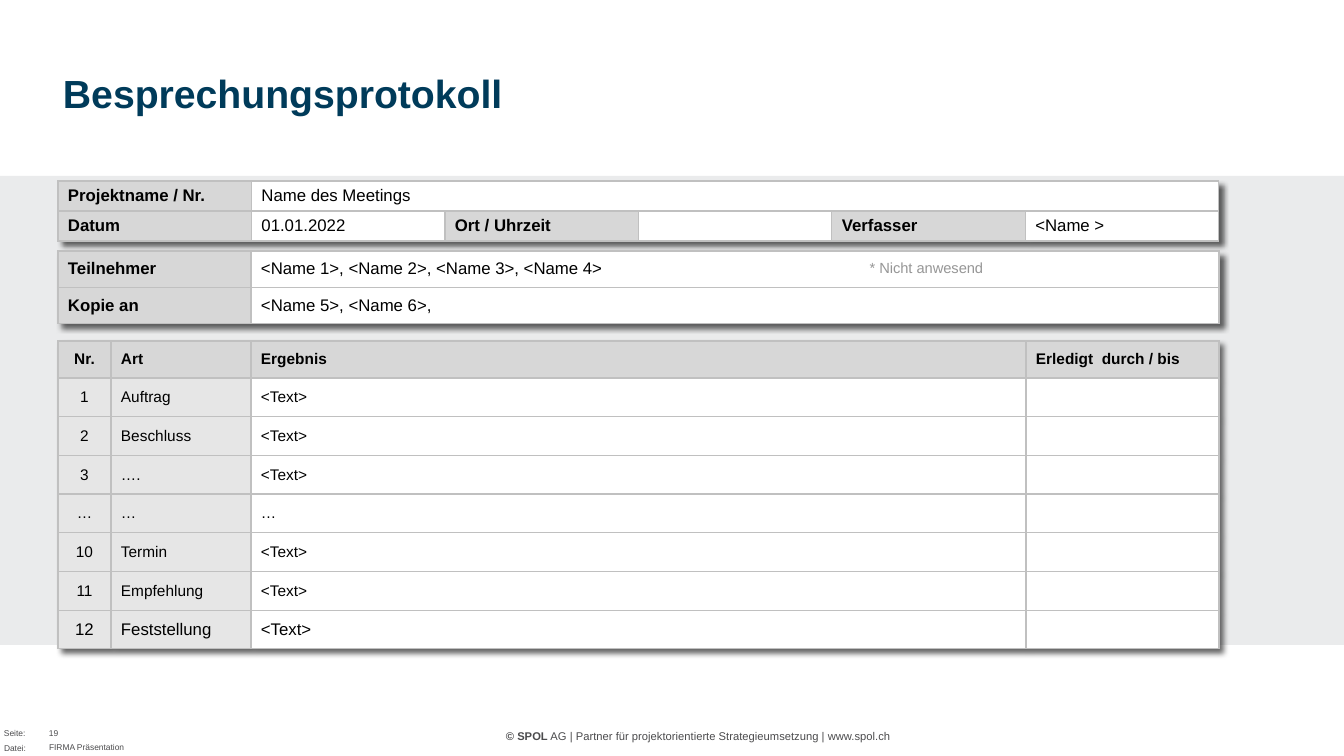
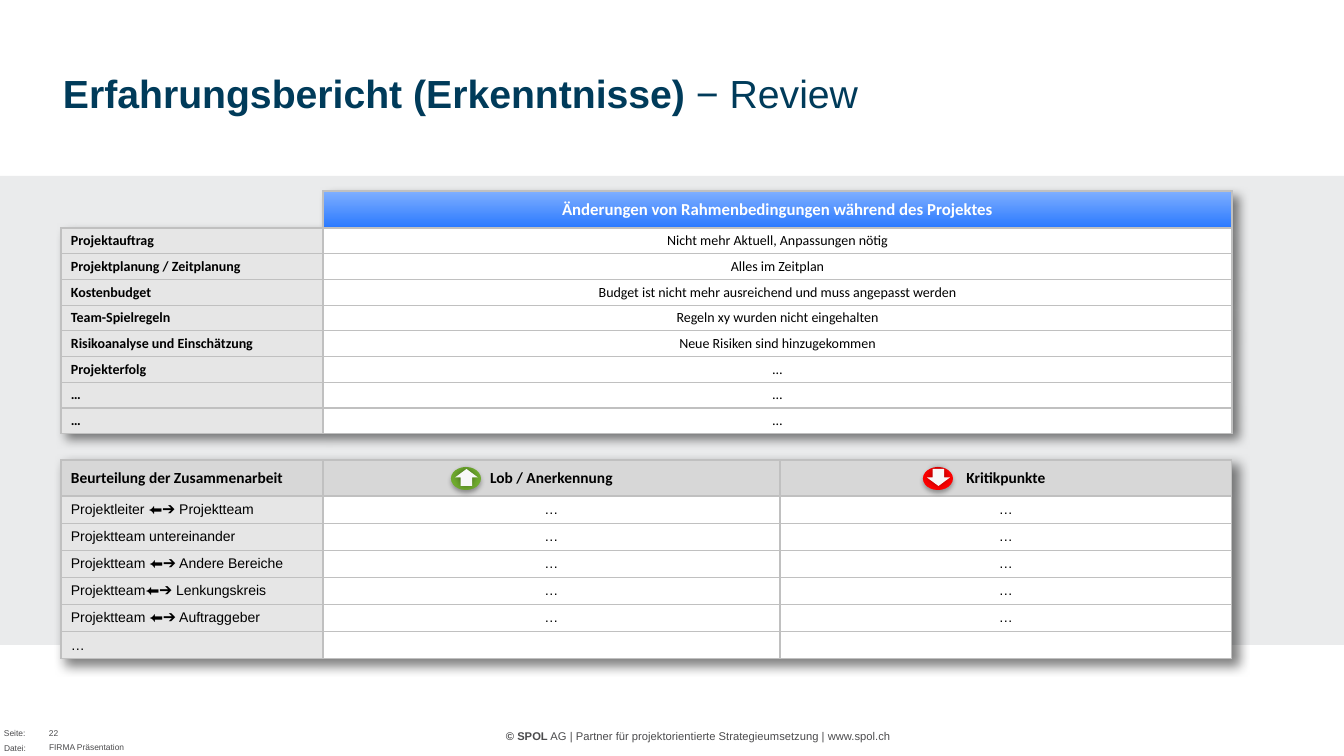
from dataclasses import dataclass, replace
from typing import NamedTuple, Optional

import lxml.etree
import pptx
import pptx.dml.color
import pptx.enum.shapes
import pptx.enum.text
import pptx.oxml.ns
import pptx.util

RGBColor = pptx.dml.color.RGBColor
Align = pptx.enum.text.PP_ALIGN
Anchor = pptx.enum.text.MSO_ANCHOR
Preset = pptx.enum.shapes.MSO_SHAPE
qn = pptx.oxml.ns.qn

# Colours
BLACK = RGBColor(0x00, 0x00, 0x00)
WHITE = RGBColor(0xFF, 0xFF, 0xFF)
NAVY = RGBColor(0x00, 0x3B, 0x5A)
FOOTER_GREY = RGBColor(0x4B, 0x4B, 0x4D)
NOTE_GREY = RGBColor(0x96, 0x96, 0x96)
BAND_GREY = RGBColor(0xEA, 0xEB, 0xEC)
HEADER_GREY = RGBColor(0xD7, 0xD7, 0xD7)
LABEL_GREY = RGBColor(0xE6, 0xE6, 0xE6)
BORDER_GREY = RGBColor(0xC0, 0xC0, 0xC0)
SKY_BLUE = RGBColor(0x7F, 0xAF, 0xFF)
BRIGHT_BLUE = RGBColor(0x2A, 0x79, 0xFF)
GREEN = RGBColor(0x70, 0xAC, 0x2E)
RED = RGBColor(0xFF, 0x00, 0x00)
ARROW_WHITE = RGBColor(0xF8, 0xF8, 0xF8)

EMU_PER_PX = 914400 / 100.8
NO_TABLE_STYLE = "{2D5ABB26-0587-4C30-8999-92F81FD0307C}"


def px(length: float) -> int:
    return round(length * EMU_PER_PX)


class Box(NamedTuple):
    left: int
    top: int
    width: int
    height: int

    def emu(self) -> list[int]:
        return [px(length) for length in self]


class Run(NamedTuple):
    text: str
    bold: bool = False


class Shadow(NamedTuple):
    opacity: int  # percent
    blur: float  # points
    distance: float  # points
    angle: int  # degrees


class CellStyle(NamedTuple):
    fill: Optional[RGBColor]
    size: float
    bold: bool = False
    align: Align = Align.LEFT
    margin: int = 4
    font: str = "Arial"
    color: RGBColor = BLACK
    fill_end: Optional[RGBColor] = None
    edges: str = "LRTB"


class Cell(NamedTuple):
    text: str
    style: CellStyle
    span: int = 1


@dataclass(frozen=True)
class Grid:
    left: int
    top: int
    columns: list[float]
    first_row: int
    height: int
    rows: list[list[Cell]]
    shadow: Shadow


@dataclass(frozen=True)
class TextStyle:
    size: float
    color: RGBColor = FOOTER_GREY
    align: Align = Align.LEFT
    anchor: Anchor = Anchor.TOP
    side: int = 0
    margin: int = 0


TITLE = TextStyle(28, NAVY, anchor=Anchor.MIDDLE, side=10)
SMALL = TextStyle(6)
SMALL_BOTTOM = replace(SMALL, anchor=Anchor.BOTTOM)
COPYRIGHT = TextStyle(8, align=Align.CENTER, anchor=Anchor.BOTTOM)
NOTE = TextStyle(10.5, NOTE_GREY, Align.CENTER, side=10, margin=5)

TIGHT_SHADOW = Shadow(60, 4, 4, 45)
WIDE_SHADOW = Shadow(50, 8, 5, 45)
DISC_SHADOW = Shadow(32, 3.5, 2.2, 90)
ARROW_SHADOW = Shadow(40, 5, 0, 0)


# Formatting helpers
def set_attributes(target, values: dict) -> None:
    for name, value in values.items():
        setattr(target, name, value)


def add_run(paragraph, text: str, size: float, color: RGBColor, bold: bool, font: str = "Arial") -> None:
    run = paragraph.add_run()
    run.text = text
    set_attributes(run.font, {"name": font, "size": pptx.util.Pt(size), "bold": bold})
    run.font.color.rgb = color


def make_shadow(shadow: Shadow) -> lxml.etree._Element:
    effects = lxml.etree.Element(qn("a:effectLst"))
    outer = lxml.etree.SubElement(
        effects, qn("a:outerShdw"), blurRad=str(pptx.util.Pt(shadow.blur)),
        dist=str(pptx.util.Pt(shadow.distance)), dir=str(shadow.angle * 60000),
        algn="ctr", rotWithShape="0")
    color = lxml.etree.SubElement(outer, qn("a:srgbClr"), val=str(BLACK))
    lxml.etree.SubElement(color, qn("a:alpha"), val=str(shadow.opacity * 1000))
    return effects


def add_text(slide, box: Box, runs: list[Run], style: TextStyle) -> None:
    frame = slide.shapes.add_textbox(*box.emu()).text_frame
    set_attributes(frame, {
        "word_wrap": True, "vertical_anchor": style.anchor,
        "margin_left": px(style.side), "margin_right": px(style.side),
        "margin_top": px(style.margin), "margin_bottom": px(style.margin)})
    paragraph = frame.paragraphs[0]
    paragraph.alignment = style.align
    for run in runs:
        add_run(paragraph, run.text, style.size, style.color, run.bold)


def add_shape(shapes, preset: Preset, box: Box, color: RGBColor, shadow: Optional[Shadow] = None):
    shape = shapes.add_shape(preset, *box.emu())
    shape.fill.solid()
    shape.fill.fore_color.rgb = color
    shape.line.fill.background()
    shape.shadow.inherit = False
    if shadow:
        properties = shape._element.spPr
        properties.replace(properties.find(qn("a:effectLst")), make_shadow(shadow))
    return shape


# Tables
def add_borders(cell, edges: str) -> None:
    properties = cell._tc.get_or_add_tcPr()
    for edge in edges:
        line = lxml.etree.SubElement(properties, qn(f"a:ln{edge}"), w=str(pptx.util.Pt(1)))
        fill = lxml.etree.SubElement(line, qn("a:solidFill"))
        lxml.etree.SubElement(fill, qn("a:srgbClr"), val=str(BORDER_GREY))


def fill_cell(cell, style: CellStyle) -> None:
    if style.fill is None:
        cell.fill.background()
    elif style.fill_end is None:
        cell.fill.solid()
        cell.fill.fore_color.rgb = style.fill
    else:
        cell.fill.gradient()
        cell.fill.gradient_angle = 270
        for stop, color in zip(cell.fill.gradient_stops, (style.fill, style.fill_end)):
            stop.color.rgb = color


def format_cell(cell, content: Cell) -> None:
    style = content.style
    add_borders(cell, style.edges)
    fill_cell(cell, style)
    set_attributes(cell, {
        "vertical_anchor": Anchor.MIDDLE, "margin_left": px(10), "margin_right": px(10),
        "margin_top": px(style.margin), "margin_bottom": px(style.margin)})
    paragraph = cell.text_frame.paragraphs[0]
    paragraph.alignment = style.align
    if content.text:
        add_run(paragraph, content.text, style.size, style.color, style.bold, style.font)
    else:
        lxml.etree.SubElement(paragraph._p, qn("a:endParaRPr"), sz=str(round(style.size * 100)))


def add_grid(slide, grid: Grid) -> None:
    box = Box(grid.left, grid.top, sum(grid.columns), grid.height)
    table = slide.shapes.add_table(len(grid.rows), len(grid.columns), *box.emu()).table
    set_attributes(table, {"first_row": False, "horz_banding": False})
    properties = table._tbl.tblPr
    properties.find(qn("a:tableStyleId")).text = NO_TABLE_STYLE
    properties.insert(0, make_shadow(grid.shadow))
    for column, width in zip(table.columns, grid.columns):
        column.width = px(width)
    body_height = (grid.height - grid.first_row) / (len(grid.rows) - 1)
    for row_index, contents in enumerate(grid.rows):
        table.rows[row_index].height = px(body_height if row_index else grid.first_row)
        column_index = 0
        for content in contents:
            last = column_index + content.span - 1
            if content.span > 1:
                table.cell(row_index, column_index).merge(table.cell(row_index, last))
            for index in range(column_index, last + 1):
                text = content.text if index == column_index else ""
                format_cell(table.cell(row_index, index), content._replace(text=text))
            column_index = last + 1


# Shared slide frame
def add_frame(slide, title: list[Run], number: str) -> None:
    add_text(slide, Box(344, 719, 709, 24), [
        Run("© SPOL", True),
        Run(" AG | Partner für projektorientierte Strategieumsetzung | www.spol.ch")], COPYRIGHT)
    add_shape(slide.shapes, Preset.RECTANGLE, Box(0, 176, 1344, 469), BAND_GREY)
    add_text(slide, Box(4, 743, 29, 10), [Run("Datei:")], SMALL)
    add_text(slide, Box(4, 728, 28, 10), [Run("Seite:")], SMALL)
    add_text(slide, Box(53, 30, 993, 126), title, TITLE)
    add_text(slide, Box(49, 726, 47, 12), [Run(number)], SMALL_BOTTOM)
    add_text(slide, Box(49, 735, 443, 17), [Run("FIRMA Präsentation")], SMALL_BOTTOM)


# Slide 1: meeting minutes
def build_minutes(slide) -> None:
    add_frame(slide, [Run("Besprechungsprotokoll", True)], "19")

    heading = CellStyle(HEADER_GREY, 11, bold=True, margin=8)
    entries = [("1", "Auftrag", "<Text>"), ("2", "Beschluss", "<Text>"), ("3", "….", "<Text>"),
               ("…", "…", "…"), ("10", "Termin", "<Text>"), ("11", "Empfehlung", "<Text>"),
               ("12", "Feststellung", "<Text>")]
    rows = [[Cell("Nr.", heading._replace(align=Align.CENTER)), Cell("Art", heading),
             Cell("Ergebnis", heading), Cell("Erledigt  durch / bis", heading)]]
    for number, kind, result in entries:
        label = CellStyle(LABEL_GREY, 12 if number == "12" else 11)
        value = label._replace(fill=WHITE)
        rows.append([Cell(number, label._replace(align=Align.CENTER)), Cell(kind, label),
                     Cell(result, value), Cell("", value)])
    add_grid(slide, Grid(58, 341, [53, 140, 775, 193], 37, 308, rows, TIGHT_SHADOW))

    label = CellStyle(HEADER_GREY, 12, bold=True)
    value = CellStyle(WHITE, 12)
    add_grid(slide, Grid(58, 181, [1161 / 6] * 6, 30, 60, [
        [Cell("Projektname / Nr.", label), Cell("Name des Meetings", value, 5)],
        [Cell("Datum", label), Cell("01.01.2022", value), Cell("Ort / Uhrzeit", label),
         Cell("", value), Cell("Verfasser", label), Cell("<Name >", value)]], TIGHT_SHADOW))

    label, value = (style._replace(margin=8) for style in (label, value))
    add_grid(slide, Grid(58, 251, [193, 968], 35, 70, [
        [Cell("Teilnehmer", label), Cell("<Name 1>, <Name 2>, <Name 3>, <Name 4>", value)],
        [Cell("Kopie an", label), Cell("<Name 5>, <Name 6>,", value)]], TIGHT_SHADOW))
    add_text(slide, Box(844, 254, 165, 29), [Run("* Nicht anwesend")], NOTE)


# Slide 2: review
def add_badge(slide, left: int, color: RGBColor, rotation: int) -> None:
    group = slide.shapes.add_group_shape()
    add_shape(group.shapes, Preset.OVAL, Box(left, 467, 30, 23), color, DISC_SHADOW)
    arrow = add_shape(group.shapes, Preset.DOWN_ARROW, Box(left + 4, 469, 23, 17),
                      ARROW_WHITE, ARROW_SHADOW)
    arrow.rotation = rotation


def build_review(slide) -> None:
    add_frame(slide, [Run("Erfahrungsbericht (Erkenntnisse) ", True), Run("− Review")], "22")

    label = CellStyle(LABEL_GREY, 10, bold=True, font="Calibri")
    value = label._replace(fill=WHITE, bold=False, align=Align.CENTER)
    corner = label._replace(fill=None, edges="RB")
    banner = CellStyle(SKY_BLUE, 12, True, Align.CENTER, 8, "Calibri", WHITE, BRIGHT_BLUE)
    changes = [("Projektauftrag", "Nicht mehr Aktuell, Anpassungen nötig"),
               ("Projektplanung / Zeitplanung", "Alles im Zeitplan"),
               ("Kostenbudget", "Budget ist nicht mehr ausreichend und muss angepasst werden"),
               ("Team-Spielregeln", "Regeln xy wurden nicht eingehalten"),
               ("Risikoanalyse und Einschätzung", "Neue Risiken sind hinzugekommen"),
               ("Projekterfolg", "…"), ("…", "…"), ("…", "…")]
    rows = [[Cell("", corner),
             Cell("Änderungen von Rahmenbedingungen während des Projektes", banner)]]
    rows += [[Cell(topic, label), Cell(change, value)] for topic, change in changes]
    add_grid(slide, Grid(61, 191, [262, 909], 37, 243, rows, WIDE_SHADOW))

    heading = CellStyle(HEADER_GREY, 11, bold=True, margin=8, font="Calibri")
    centred = heading._replace(align=Align.CENTER)
    label = CellStyle(LABEL_GREY, 10)
    value = CellStyle(WHITE, 10, align=Align.CENTER)
    relations = ["Projektleiter ⬅➔ Projektteam", "Projektteam untereinander",
                 "Projektteam ⬅➔ Andere Bereiche", "Projektteam⬅➔ Lenkungskreis",
                 "Projektteam ⬅➔ Auftraggeber", "…"]
    rows = [[Cell("Beurteilung der Zusammenarbeit", heading),
             Cell("Lob / Anerkennung", centred), Cell("Kritikpunkte", centred)]]
    for relation in relations:
        rating = Cell("" if relation == "…" else "…", value)
        rows.append([Cell(relation, label), rating, rating])
    add_grid(slide, Grid(61, 460, [262, 457, 452], 36, 199, rows, WIDE_SHADOW))
    add_badge(slide, 451, GREEN, 180)
    add_badge(slide, 923, RED, 0)


def main() -> None:
    presentation = pptx.Presentation()
    presentation.slide_width, presentation.slide_height = px(1344), px(756)
    for build in (build_minutes, build_review):
        build(presentation.slides.add_slide(presentation.slide_layouts[6]))
    presentation.save("out.pptx")


if __name__ == "__main__":
    main()
